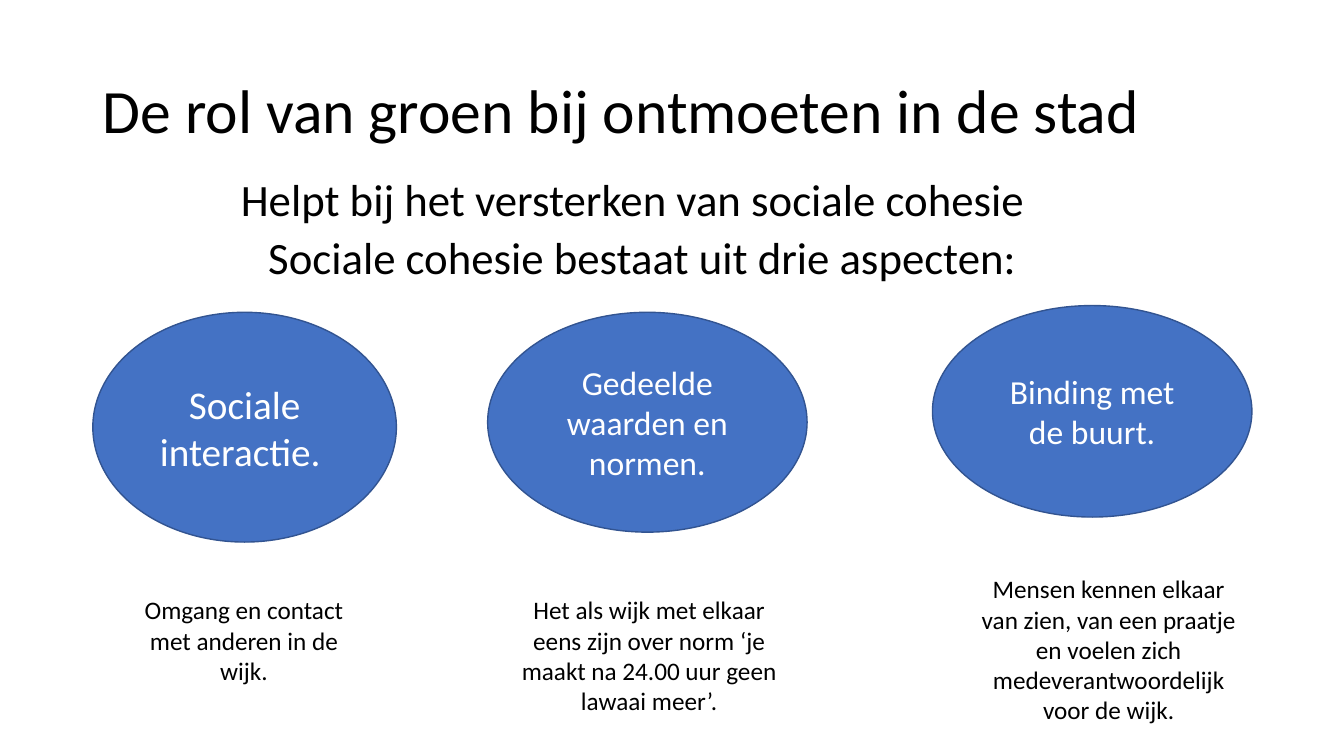
import pptx
import pptx.util
import pptx.dml.color
import pptx.enum.shapes
import pptx.enum.text

Cm = pptx.util.Cm
Pt = pptx.util.Pt
RGBColor = pptx.dml.color.RGBColor
PP_ALIGN = pptx.enum.text.PP_ALIGN
MSO_ANCHOR = pptx.enum.text.MSO_ANCHOR

FONT = "Calibri"
BLACK = RGBColor(0x00, 0x00, 0x00)
WHITE = RGBColor(0xFF, 0xFF, 0xFF)
BLUE = RGBColor(0x44, 0x72, 0xC4)
DARK_BLUE = RGBColor(0x32, 0x54, 0x91)

# Left, top, width and height in cm, then the wording
STATEMENTS = [
    ((4.95, 4.19, 22.25, 1.62), "Helpt bij het versterken van sociale cohesie "),
    ((5.46, 5.66, 21.72, 1.62), "Sociale cohesie bestaat uit drie aspecten: "),
]
ASPECTS = [
    ((2.34, 7.87, 7.65, 5.79), "Sociale interactie. ", 28),
    ((12.29, 7.87, 8.05, 5.54), "Gedeelde waarden en normen.", 24),
    ((23.5, 7.7, 8.05, 5.33), "Binding met de buurt.", 24),
]
EXPLANATIONS = [
    ((3.33, 14.86, 5.64, 2.57), "Omgang en contact met anderen in de wijk."),
    ((12.73, 14.86, 7.26, 3.33),
     "Het als wijk met elkaar eens zijn over norm ‘je maakt na 24.00 uur "
     "geen lawaai meer’."),
    ((24.36, 14.33, 7.16, 4.11),
     "Mensen kennen elkaar van zien, van een praatje en voelen zich "
     "medeverantwoordelijk voor de wijk."),
]


def write(tf, text, size, color, align=PP_ALIGN.CENTER):
    tf.word_wrap = True
    p = tf.paragraphs[0]
    p.alignment = align
    r = p.add_run()
    r.text = text
    r.font.name = FONT
    r.font.size = Pt(size)
    r.font.color.rgb = color
    return p


def add_title(s, box, text):
    sp = s.shapes.title
    sp.left, sp.top, sp.width, sp.height = map(Cm, box)
    tf = sp.text_frame
    tf.auto_size = pptx.enum.text.MSO_AUTO_SIZE.NONE
    tf.vertical_anchor = MSO_ANCHOR.MIDDLE
    p = write(tf, text, 44, BLACK, PP_ALIGN.LEFT)
    p.line_spacing = 0.9


def add_text(s, box, text, size):
    tf = s.shapes.add_textbox(*map(Cm, box)).text_frame
    write(tf, text, size, BLACK)
    tf.auto_size = pptx.enum.text.MSO_AUTO_SIZE.SHAPE_TO_FIT_TEXT


def add_ellipse(s, box, text, size):
    sp = s.shapes.add_shape(pptx.enum.shapes.MSO_SHAPE.OVAL, *map(Cm, box))
    sp.shadow.inherit = False
    sp.fill.solid()
    sp.fill.fore_color.rgb = BLUE
    sp.line.color.rgb = DARK_BLUE
    sp.line.width = Pt(1)
    sp.text_frame.vertical_anchor = MSO_ANCHOR.MIDDLE
    write(sp.text_frame, text, size, WHITE)


def main():
    prs = pptx.Presentation()
    prs.slide_width, prs.slide_height = Cm(33.87), Cm(19.05)
    s = prs.slides.add_slide(prs.slide_layouts.get_by_name("Title Only"))

    # Title and opening statements
    add_title(s, (2.34, 1.02, 29.21, 3.68),
              "De rol van groen bij ontmoeten in de stad")
    for box, text in STATEMENTS:
        add_text(s, box, text, 32)

    # The three aspects and what they mean
    for box, text, size in ASPECTS:
        add_ellipse(s, box, text, size)
    for box, text in EXPLANATIONS:
        add_text(s, box, text, 18)

    prs.save("out.pptx")


if __name__ == "__main__":
    main()
